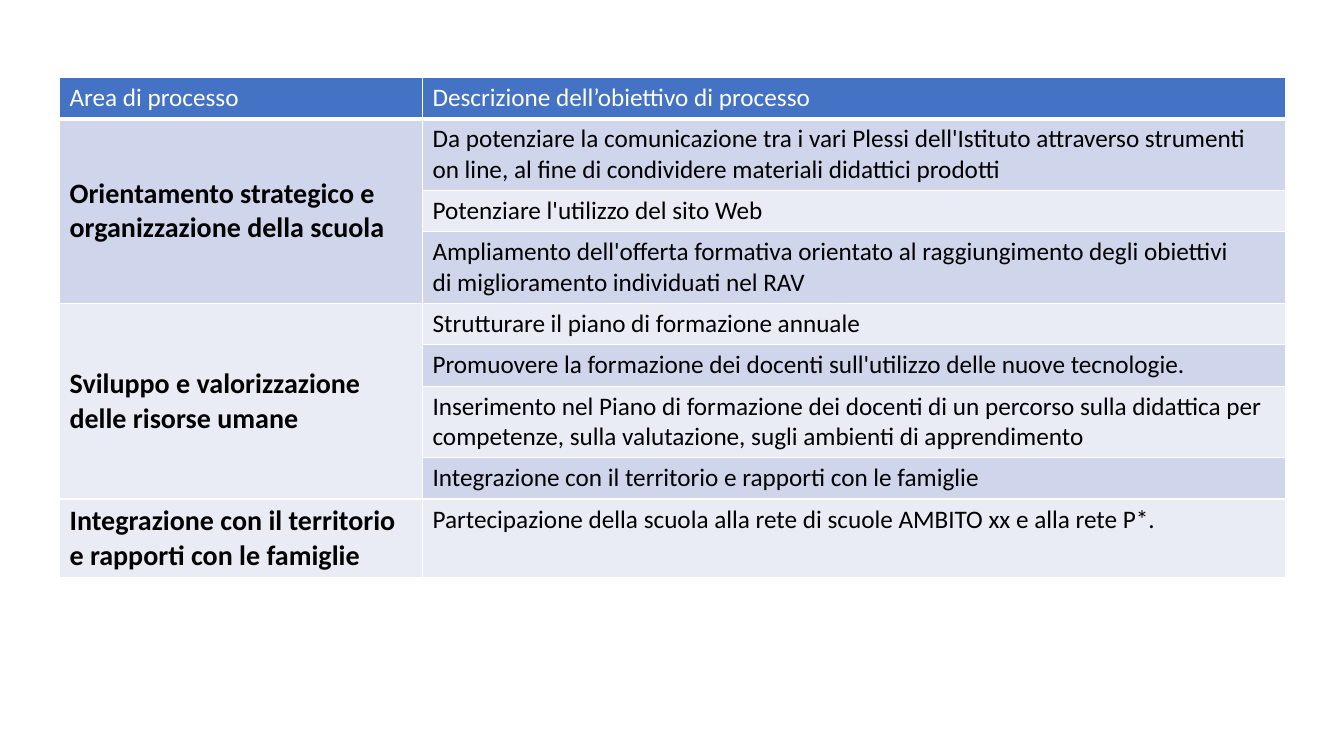
import dataclasses

import lxml.etree
import pptx
import pptx.dml.color
import pptx.enum.text
import pptx.oxml.ns
import pptx.table
import pptx.util

HUES: dict[str, str] = {
    "head": "4472C4",
    "dark": "CFD5EA",
    "light": "E9EBF5",
    "white": "FFFFFF",
    "black": "000000",
}
FONT = "Calibri"
LINE, PAIR, LAST = 0.41, 0.7, 0.77


@dataclasses.dataclass
class Goal:
    text: str
    high: float = LINE


@dataclasses.dataclass
class Area:
    name: str
    fill: str
    goals: list[Goal]


@dataclasses.dataclass
class Style:
    fill: str
    ink: str = "black"
    size: int = 18
    bold: bool = False
    base: int = 1


HEADS = ["Area di processo", "Descrizione dell’obiettivo di processo"]
AREAS = [
    Area("Orientamento strategico e organizzazione della scuola", "dark", [
        Goal("Da potenziare la comunicazione tra i vari Plessi dell'Istituto attraverso "
             "strumenti on line, al fine di condividere materiali didattici prodotti", PAIR),
        Goal("Potenziare l'utilizzo del sito Web"),
        Goal("Ampliamento dell'offerta formativa orientato al raggiungimento degli obiettivi\n"
             "di miglioramento individuati nel RAV", PAIR),
    ]),
    Area("Sviluppo e valorizzazione delle risorse umane", "light", [
        Goal("Strutturare il piano di formazione annuale"),
        Goal("Promuovere la formazione dei docenti sull'utilizzo delle nuove tecnologie."),
        Goal("Inserimento nel Piano di formazione dei docenti di un percorso sulla didattica per\n"
             "competenze, sulla valutazione, sugli ambienti di apprendimento", PAIR),
        Goal("Integrazione con il territorio e rapporti con le famiglie"),
    ]),
    Area("Integrazione con il territorio e rapporti con le famiglie", "light", [
        Goal("Partecipazione della scuola alla rete di scuole AMBITO xx e alla rete P*.", LAST),
    ]),
]


def tint(name: str) -> pptx.dml.color.RGBColor:
    return pptx.dml.color.RGBColor.from_string(HUES[name])


def edge(cell: pptx.table._Cell, base: int) -> None:
    props = cell._tc.get_or_add_tcPr()
    name = pptx.oxml.ns.qn
    for side, width in {"L": 1, "R": 1, "T": 1, "B": base}.items():
        line = lxml.etree.SubElement(props, name(f"a:ln{side}"), w=str(pptx.util.Pt(width)))
        fill = lxml.etree.SubElement(line, name("a:solidFill"))
        lxml.etree.SubElement(fill, name("a:srgbClr"), val=HUES["white"])


def paint(cell: pptx.table._Cell, style: Style, text: str = "") -> None:
    edge(cell, style.base)
    cell.fill.solid()
    cell.fill.fore_color.rgb = tint(style.fill)
    cell.text = text
    for para in cell.text_frame.paragraphs:
        para.font.name = FONT
        para.font.size = pptx.util.Pt(style.size)
        para.font.bold = style.bold
        para.font.color.rgb = tint(style.ink)


def fill_rows(table: pptx.table.Table) -> None:
    row = 1
    for area in AREAS:
        first = table.cell(row, 0)
        last = row + len(area.goals) - 1
        for step, goal in enumerate(area.goals):
            table.rows[row].height = pptx.util.Inches(goal.high)
            label = area.name if step == 0 else ""
            paint(table.cell(row, 0), Style(area.fill, size=20, bold=True), label)
            paint(table.cell(row, 1), Style("dark" if row % 2 else "light"), goal.text)
            row += 1
        first.vertical_anchor = pptx.enum.text.MSO_ANCHOR.MIDDLE
        if len(area.goals) > 1:
            first.merge(table.cell(last, 0))


def main() -> None:
    deck = pptx.Presentation()
    deck.slide_width = pptx.util.Inches(13.33)
    deck.slide_height = pptx.util.Inches(7.5)
    slide = deck.slides.add_slide(deck.slide_layouts[6])
    count = 1 + sum(len(area.goals) for area in AREAS)
    frame = slide.shapes.add_table(
        count, 2, pptx.util.Inches(0.59), pptx.util.Inches(0.77),
        pptx.util.Inches(12.16), pptx.util.Inches(4.89))
    table = frame.table
    for column, width in zip(table.columns, (3.6, 8.56)):
        column.width = pptx.util.Inches(width)
    table.rows[0].height = pptx.util.Inches(LINE)
    for place, head in enumerate(HEADS):
        paint(table.cell(0, place), Style("head", ink="white", base=3), head)
    fill_rows(table)
    deck.save("out.pptx")


if __name__ == "__main__":
    main()
